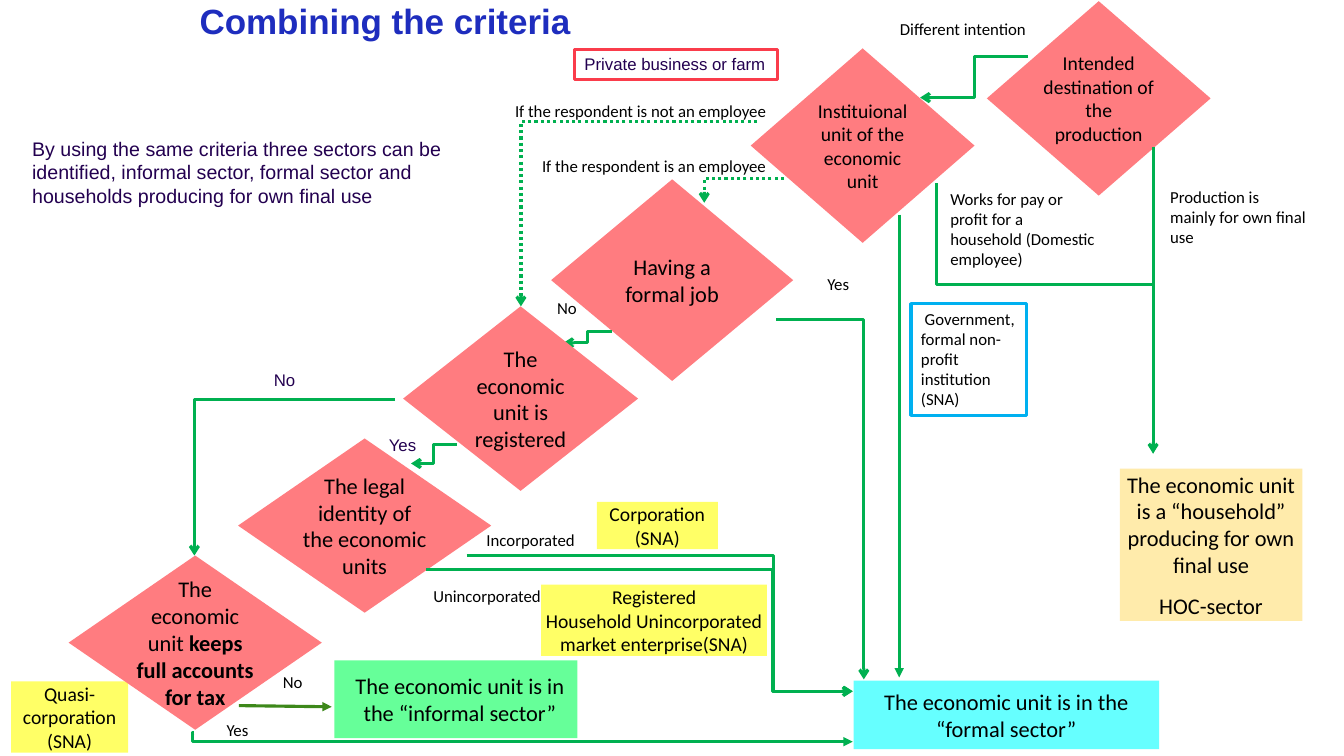
import pptx
import pptx.util
import pptx.dml.color
import pptx.enum.dml
import pptx.enum.shapes
import pptx.enum.text
import pptx.oxml.ns
import lxml.etree

Cm = pptx.util.Cm
Pt = pptx.util.Pt
SHAPE = pptx.enum.shapes.MSO_SHAPE
ANCHOR = pptx.enum.text.MSO_ANCHOR
ALIGN = pptx.enum.text.PP_ALIGN
qn = pptx.oxml.ns.qn

COLORS = {
    "black": "000000", "title": "1E2DBE", "violet": "230050",
    "decision": "FF7C80", "household": "FFEBAB", "formal": "66FFFF",
    "informal": "66FF99", "note": "FFFF66", "red": "FA3C4B",
    "blue": "00B0F0", "green": "00B050", "olive": "3D881A",
}


def color(name):
    return pptx.dml.color.RGBColor.from_string(COLORS[name])


def place(origin, x, y):
    return Cm(origin[0] + x), Cm(origin[1] + y)


def add_span(para, text, size, font="Calibri", ink="black", bold=False):
    span = para.add_run()
    span.text = text
    span.font.name = font
    span.font.size = Pt(size)
    span.font.bold = bold
    span.font.color.rgb = color(ink)


def write(box, paragraphs, size, font="Calibri", ink="black", align=ALIGN.LEFT, gap=0):
    for index, spans in enumerate(paragraphs):
        para = box.text_frame.paragraphs[0] if index == 0 else box.text_frame.add_paragraph()
        para.alignment = align
        para.space_after = Pt(gap)
        for text, bold in spans:
            add_span(para, text, size, font, ink, bold)


def add_block(page, origin, area, kind, fill, paragraphs, size, inset=0, gap=0):
    x, y, width, height = area
    box = page.shapes.add_shape(kind, *place(origin, x, y), Cm(width), Cm(height))
    box.shadow.inherit = False
    box.fill.solid()
    box.fill.fore_color.rgb = color(fill)
    box.line.fill.background()
    frame = box.text_frame
    frame.word_wrap = True
    frame.vertical_anchor = ANCHOR.MIDDLE
    frame.margin_left = Cm(inset)
    frame.margin_right = frame.margin_top = frame.margin_bottom = 0
    write(box, paragraphs, size, align=ALIGN.CENTER, gap=gap)


def add_decision(page, origin, area, text, size=16, strong=None):
    spans = [(text, False)] + ([(strong, True)] if strong else [])
    add_block(page, origin, area, SHAPE.DIAMOND, "decision", [spans], size)


def add_result(page, origin, area, fill, *texts, size=16, inset=0, gap=0):
    paragraphs = [[(text, False)] for text in texts]
    add_block(page, origin, area, SHAPE.RECTANGLE, fill, paragraphs, size, inset, gap)


def add_label(page, origin, area, text, wrap=False, font="Calibri", ink="black", size=12):
    x, y, width, height = area
    box = page.shapes.add_textbox(*place(origin, x, y), Cm(width), Cm(height))
    box.text_frame.word_wrap = wrap
    write(box, [[(text, False)]], size, font, ink)
    return box


def add_framed(page, origin, area, text, border, wrap, font="Calibri", ink="black"):
    x, y, width, height = area
    box = page.shapes.add_shape(SHAPE.RECTANGLE, *place(origin, x, y), Cm(width), Cm(height))
    box.shadow.inherit = False
    box.fill.background()
    box.line.color.rgb = color(border)
    box.line.width = Pt(2.25)
    box.text_frame.word_wrap = wrap
    box.text_frame.vertical_anchor = ANCHOR.TOP
    write(box, [[(text, False)]], 12, font, ink)


def add_arrow(page, origin, start, end, preset="straightConnector1", bend=None,
              head="arrow", ink="green", dotted=False):
    kind = pptx.enum.shapes.MSO_CONNECTOR.STRAIGHT
    if preset.startswith("bent"):
        kind = pptx.enum.shapes.MSO_CONNECTOR.ELBOW
    arrow = page.shapes.add_connector(kind, *place(origin, *start), *place(origin, *end))
    arrow.line.color.rgb = color(ink)
    arrow.line.width = Pt(2.25)
    if dotted:
        arrow.line.dash_style = pptx.enum.dml.MSO_LINE.ROUND_DOT
    properties = arrow._element.spPr
    lxml.etree.SubElement(properties.find(qn("a:ln")), qn("a:tailEnd"), type=head)
    lxml.etree.SubElement(properties, qn("a:effectLst"))
    geometry = properties.find(qn("a:prstGeom"))
    geometry.set("prst", preset)
    if bend is not None:
        guides = geometry.find(qn("a:avLst"))
        lxml.etree.SubElement(guides, qn("a:gd"), name="adj1", fmla=f"val {round(bend * 100000)}")
    return arrow


def add_corner(page, origin, start, end, dotted=False):
    add_arrow(page, origin, start, end, "bentConnector2", dotted=dotted)


def add_step(page, origin, start, end, bend=0.5, head="arrow"):
    add_arrow(page, origin, start, end, "bentConnector3", bend, head)


def add_descent(page, origin, start, end, bend):
    center_x, center_y = (start[0] + end[0]) / 2, (start[1] + end[1]) / 2
    half_x, half_y = (end[1] - start[1]) / 2, (end[0] - start[0]) / 2
    arrow = add_arrow(page, origin, (center_x + half_x, center_y - half_y),
                      (center_x - half_x, center_y + half_y), "bentConnector3", bend)
    arrow._element.spPr.find(qn("a:xfrm")).set("rot", "16200000")


def draw_heading(page, origin):
    title = page.shapes.title
    title.left, title.top = place(origin, 5.03, 0.1)
    title.width, title.height = Cm(23.75), Cm(3.12)
    frame = title.text_frame
    frame.margin_left = frame.margin_right = frame.margin_top = frame.margin_bottom = 0
    frame.vertical_anchor = ANCHOR.TOP
    para = frame.paragraphs[0]
    para.alignment = ALIGN.LEFT
    para.line_spacing = 0.9
    add_span(para, "Combining the criteria", 25, "Arial", "title", True)
    intro = add_label(page, origin, (0.56, 3.3, 11.68, 2.06),
                      "By using the same criteria three sectors can be identified, informal sector, "
                      "formal sector and households producing for own final use",
                      True, "Arial", "violet", 14)
    intro.text_frame.vertical_anchor = ANCHOR.MIDDLE


def draw_destination(page, origin):
    add_decision(page, origin, (2.87, 0.03, 5.64, 4.9), "Intended destination of the production", 14)
    add_label(page, origin, (0.43, 0.36, 3.94, 0.76), "Different intention", True)
    add_step(page, origin, (3.91, 1.42), (1.19, 2.46))
    add_arrow(page, origin, (7.06, 3.71), (7.06, 11.43), head="triangle")
    add_label(page, origin, (7.24, 4.57, 3.94, 1.8), "Production is mainly for own final use", True)
    add_result(page, origin, (6.22, 11.81, 4.6, 3.84), "household",
               "The economic unit is a “household” producing for own final use", "HOC-sector", gap=10)


def draw_institution(page, origin):
    add_decision(page, origin, (6.22, 0.22, 5.64, 4.9), "Instituional unit of the economic unit", 14)
    add_framed(page, origin, (1.78, 0.24, 5.11, 0.76), "Private business or farm", "red", False,
               "Arial", "violet")
    add_label(page, origin, (0.03, 1.41, 6.91, 0.76), "If the respondent is not an employee")
    add_label(page, origin, (0.71, 2.81, 6.22, 0.76), "If the respondent is an employee")
    add_corner(page, origin, (6.38, 2.07), (0.43, 6.72), True)
    add_corner(page, origin, (7.06, 3.5), (5.05, 4.11), True)
    add_label(page, origin, (11, 3.62, 4.22, 2.31),
              "Works for pay or profit for a household (Domestic employee)", True)
    add_descent(page, origin, (10.9, 3.62), (16.36, 10.43), 0.376)
    add_framed(page, origin, (10.26, 6.65, 2.9, 2.82),
               " Government, formal non-profit institution (SNA)", "blue", True)
    add_arrow(page, origin, (9.96, 4.41), (9.96, 16.07), head="triangle")


def draw_job(page, origin):
    add_decision(page, origin, (0.89, 0.52, 6.1, 5.08), "Having a formal job")
    add_label(page, origin, (0.79, 3.39, 1.02, 0.76), "No")
    add_label(page, origin, (7.6, 2.78, 1.07, 0.76), "Yes")
    add_step(page, origin, (2.42, 4.36), (1.2, 4.64))
    add_corner(page, origin, (6.56, 4.05), (8.77, 13.12))


def draw_registration(page, origin):
    add_decision(page, origin, (6.16, 0.72, 5.92, 4.65), "The economic unit is registered")
    add_label(page, origin, (5.55, 3.82, 1.22, 0.76), "Yes", False, "Arial", "violet")
    add_label(page, origin, (2.65, 2.19, 1.35, 0.76), "No", True, "Arial", "violet")
    add_corner(page, origin, (5.96, 3.06), (0.9, 7))
    add_step(page, origin, (7.51, 4.2), (6.36, 4.68))


def draw_legal_identity(page, origin):
    add_decision(page, origin, (0, 0.05, 6.38, 4.39), "The legal identity of the economic units")
    add_label(page, origin, (6.01, 2.23, 2.84, 0.76), "Incorporated")
    add_label(page, origin, (4.67, 3.63, 3.35, 0.76), "Unincorporated")
    for start, bend in (((5.76, 3), 0.794), ((4.74, 3.35), 0.813)):
        add_step(page, origin, start, (15.49, 6.42), bend)
    add_result(page, origin, (9.04, 1.65, 3.05, 1.19), "note", "Corporation (SNA)", size=14)
    add_result(page, origin, (7.64, 3.73, 5.69, 1.8), "note", "Registered",
               "Household Unincorporated market enterprise(SNA)", size=14)


def draw_accounts(page, origin):
    add_result(page, origin, (0.28, 3.17, 2.95, 1.8), "note", "Quasi-corporation (SNA)", size=14)
    add_decision(page, origin, (1.73, 0, 6.38, 4.39), "The economic unit ",
                 strong="keeps full accounts for tax")
    add_label(page, origin, (5.46, 4.01, 1.07, 0.76), "Yes")
    add_label(page, origin, (6.88, 2.81, 1.02, 0.76), "No")
    add_arrow(page, origin, (6.02, 3.78), (8.36, 3.81), head="triangle", ink="olive")
    add_step(page, origin, (4.9, 4.47), (21.49, 4.69), -0.003, "triangle")
    add_result(page, origin, (8.43, 2.64, 6.12, 1.96), "informal",
               "The economic unit is in the “informal sector”", inset=0.2)


def draw_formal_sector(page, origin):
    add_result(page, origin, (0, 0, 7.7, 1.73), "formal", "The economic unit is in the “formal sector”")


def main():
    deck = pptx.Presentation()
    deck.slide_width, deck.slide_height = Cm(33.87), Cm(19.05)
    page = deck.slides.add_slide(deck.slide_layouts[5])
    draw_heading(page, (0, 0))
    draw_destination(page, (22, 0))
    draw_institution(page, (12.7, 1))
    draw_job(page, (13, 4))
    draw_registration(page, (4, 7))
    draw_legal_identity(page, (6, 11))
    draw_accounts(page, (0, 14))
    draw_formal_sector(page, (21.51, 17.15))
    deck.save("out.pptx")


if __name__ == "__main__":
    main()
